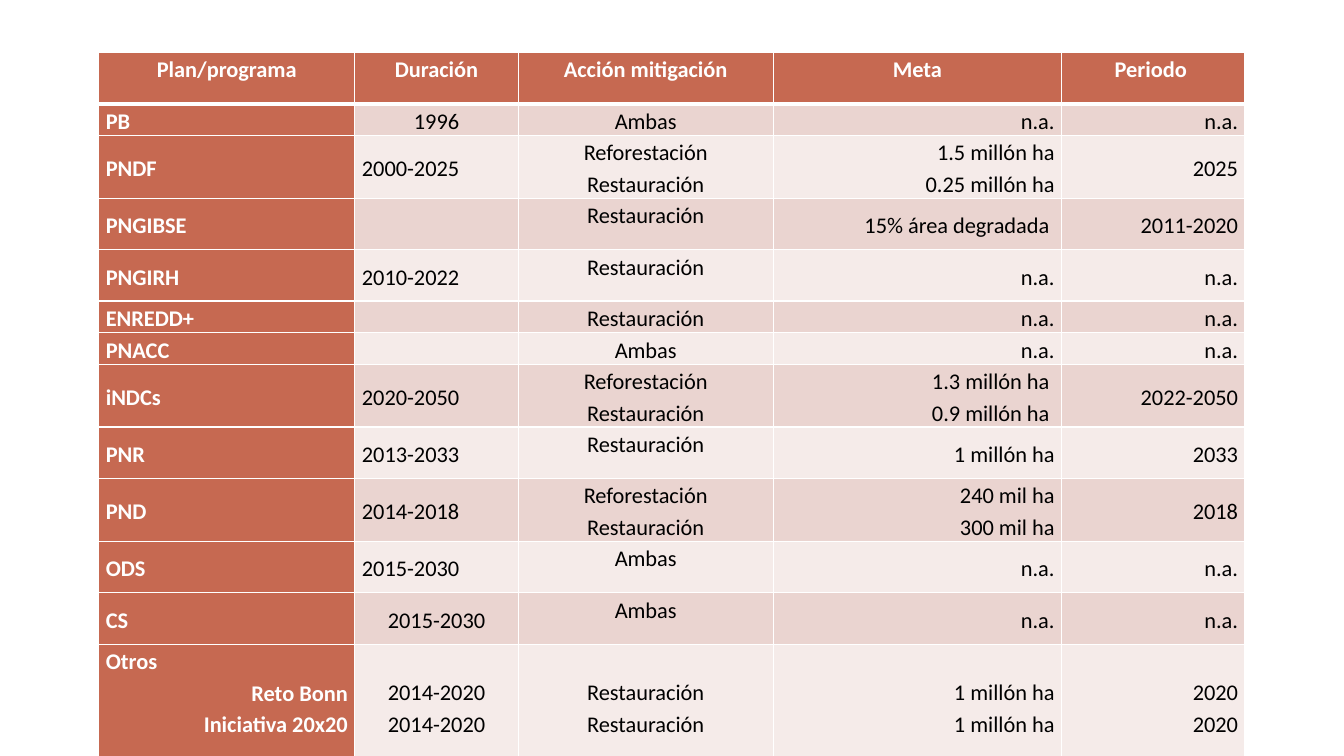
"""Build a slide with a table of plans and their mitigation goals."""
from lxml import etree
from pptx import Presentation
from pptx.dml.color import RGBColor
from pptx.enum.text import MSO_ANCHOR, PP_ALIGN
from pptx.oxml.ns import qn
from pptx.util import Inches, Pt

LEFT, MID, RIGHT = PP_ALIGN.LEFT, PP_ALIGN.CENTER, PP_ALIGN.RIGHT
TOP, CENTRE = MSO_ANCHOR.TOP, MSO_ANCHOR.MIDDLE

THEME = {
    "font": "Calibri", "size": 16, "space": 1.15, "thin": 1, "thick": 3,
    "head": "C66951", "odd": "EAD4D0", "even": "F5EBE9",
    "line": "FFFFFF", "light": "FFFFFF", "dark": "000000",
}
WIDE, HIGH = 13.33, 7.5
UNIT, PAD, LINE = 0.255, 0.07, 0.31
COLS = [2.54, 1.62, 2.53, 2.86, 1.82]
SPANS = [2, 1, 2, 2, 2, 1, 1, 2, 2, 2, 2, 2, 5.14]
ROWS = [
    ["Plan/programa", "Duración", "Acción mitigación", "Meta", "Periodo "],
    ["PB", "1996", "Ambas", "n.a.", "n.a."],
    ["PNDF", "2000-2025", "Reforestación\nRestauración",
     "1.5 millón ha\n0.25 millón ha", "2025"],
    ["PNGIBSE", "", "Restauración", "15% área degradada ", "2011-2020"],
    ["PNGIRH", "2010-2022", "Restauración", "n.a.", "n.a."],
    ["ENREDD+", "", "Restauración", "n.a.", "n.a."],
    ["PNACC", "", "Ambas", "n.a.", "n.a."],
    ["iNDCs", "2020-2050", "Reforestación\nRestauración",
     "1.3 millón ha \n0.9 millón ha ", "2022-2050"],
    ["PNR", "2013-2033", "Restauración", "1 millón ha", "2033"],
    ["PND", "2014-2018", "Reforestación\nRestauración",
     "240 mil ha\n300 mil ha", "2018"],
    ["ODS", "2015-2030", "Ambas", "n.a.", "n.a."],
    ["CS", "2015-2030", "Ambas", "n.a.", "n.a."],
    ["Otros\nReto Bonn\nIniciativa 20x20", "2014-2020\n2014-2020",
     "Restauración\nRestauración", "1 millón ha\n1 millón ha", "2020\n2020"],
]
LAST = len(ROWS) - 1
MIDDLED = {1, LAST - 1, LAST}


def write(frame, text, color, bold, align, rest):
    """Write lines of text, the first aligned apart from the rest."""
    for i, part in enumerate(text.split("\n")):
        para = frame.add_paragraph() if i else frame.paragraphs[0]
        para.alignment = rest if i else align
        para.line_spacing = THEME["space"]
        run = para.add_run()
        run.text = part
        run.font.name = THEME["font"]
        run.font.size = Pt(THEME["size"])
        run.font.bold = bold
        run.font.color.rgb = RGBColor.from_string(color)


def edge(cell, widths):
    """Draw the left, right, top and bottom borders of a cell."""
    props = cell._tc.get_or_add_tcPr()
    for i, (side, width) in enumerate(zip("LRTB", widths)):
        line = etree.Element(qn(f"a:ln{side}"), w=str(Pt(width)))
        fill = etree.SubElement(line, qn("a:solidFill"))
        etree.SubElement(fill, qn("a:srgbClr"), val=THEME["line"])
        props.insert(i, line)


deck = Presentation()
deck.slide_width, deck.slide_height = Inches(WIDE), Inches(HIGH)
slide = deck.slides.add_slide(deck.slide_layouts[6])
table = slide.shapes.add_table(
    len(ROWS), len(COLS), Inches(0.98), Inches(0.52),
    Inches(sum(COLS)), Inches(sum(SPANS) * UNIT)).table
table.horz_banding = False
table.first_col = True
for col, width in zip(table.columns, COLS):
    col.width = Inches(width)
for row, span in zip(table.rows, SPANS):
    row.height = Inches(span * UNIT)

for r, texts in enumerate(ROWS):
    for c, text in enumerate(texts):
        cell = table.cell(r, c)
        title = r == 0 or c == 0
        cell.margin_left = cell.margin_right = Inches(PAD)
        cell.margin_top = Inches(LINE if r == LAST and c else 0)
        cell.margin_bottom = 0
        cell.vertical_anchor = TOP if r in (0, LAST) or c == 2 else CENTRE
        cell.fill.solid()
        cell.fill.fore_color.rgb = RGBColor.from_string(
            THEME["head" if title else "odd" if r % 2 else "even"])
        thin, thick = THEME["thin"], THEME["thick"]
        edge(cell, [thin, thin, thick if r == 1 else thin,
                    thick if r == 0 else thin])
        if r == 0 or c == 2 or (c == 1 and r in MIDDLED):
            align = MID
        else:
            align = LEFT if c < 2 else RIGHT
        if text:
            write(cell.text_frame, text, align=align, bold=title,
                  color=THEME["light" if title else "dark"],
                  rest=align if c else RIGHT)

deck.save("out.pptx")
